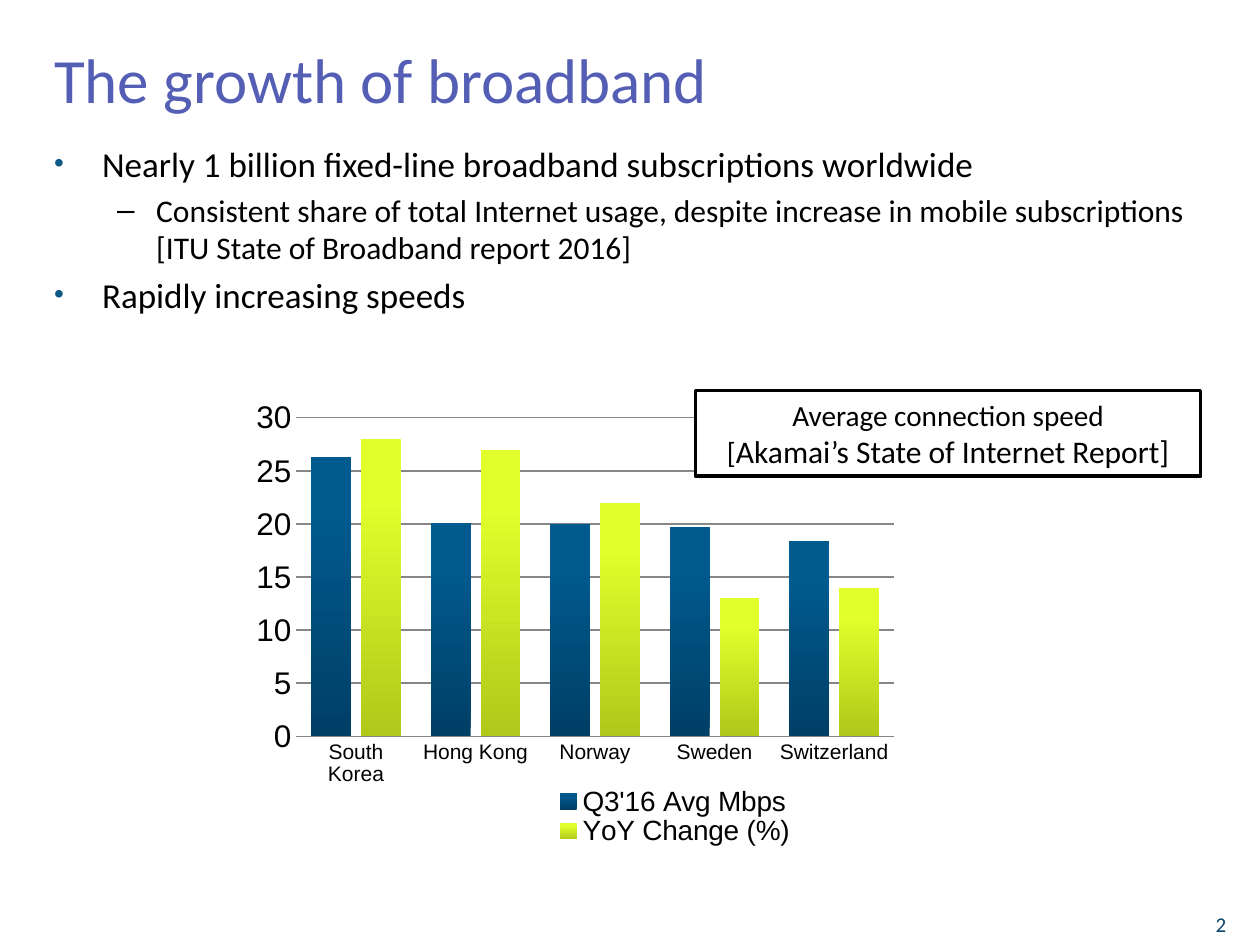
"""Build a slide on broadband growth with a bullet list and a speed chart."""
from lxml import etree
from pptx import Presentation, util as u
from pptx.chart import data as cd
from pptx.dml.color import RGBColor
from pptx.enum import chart as ch, shapes, text
from pptx.oxml import ns

THEME = {
    "font": "Calibri", "chart_font": "Arial",
    "title": "545EB4", "text": "000000", "bullet": "0C5986",
    "number": "094365", "paper": "FFFFFF", "grid": "878787",
    "title_size": 36, "sizes": (20, 18), "number_size": 12,
    "axis_size": 18, "category_size": 12, "legend_size": 16,
}
TITLE = "The growth of broadband"
BULLETS = [
    (0, "Nearly 1 billion fixed-line broadband subscriptions worldwide"),
    (1, "Consistent share of total Internet usage, despite increase in mobile "
        "subscriptions [ITU State of Broadband report 2016]"),
    (0, "Rapidly increasing speeds"),
]
LEVELS = [
    {"char": "•", "color": THEME["bullet"], "scale": 80, "left": 0.38, "hang": 0.38},
    {"char": "–", "color": THEME["text"], "scale": 100, "left": 0.81, "hang": 0.31},
]
CAPTION = [
    [("Average connection speed", 16.7)],
    [("[", 16.7), ("Akamai’s State of Internet Report]", 18)],
]
COUNTRIES = ["South Korea", "Hong Kong", "Norway", "Sweden", "Switzerland"]
SERIES = [
    ("Q3'16 Avg Mbps", (26.3, 20.1, 20, 19.7, 18.4), ("003F66", "005A8E")),
    ("YoY Change (%)", (28, 27, 22, 13, 14), ("B0C81A", "E0FF2B")),
]
NUMBER = "2"


def rgb(name):
    return RGBColor.from_string(name)


def box(*lengths):
    return [u.Inches(v) for v in lengths]


def place(sp, *lengths):
    sp.left, sp.top, sp.width, sp.height = box(*lengths)


def style(font, size, color=THEME["text"], name=THEME["font"]):
    font.size, font.name = u.Pt(size), name
    font.color.rgb = rgb(color)


def add_text(p, content, size, color=THEME["text"], align=text.PP_ALIGN.LEFT):
    p.alignment = align
    r = p.add_run()
    r.text = content
    style(r.font, size, color)


def paragraph(tf, i):
    return tf.add_paragraph() if i else tf.paragraphs[0]


def add_bullet(p, char, color, scale, left, hang):
    pr = p._p.get_or_add_pPr()
    pr.set("marL", str(u.Inches(left)))
    pr.set("indent", str(-u.Inches(hang)))
    clr = etree.SubElement(pr, ns.qn("a:buClr"))
    etree.SubElement(clr, ns.qn("a:srgbClr"), val=color)
    etree.SubElement(pr, ns.qn("a:buSzPct"), val=str(scale * 1000))
    etree.SubElement(pr, ns.qn("a:buFont"), typeface=THEME["chart_font"])
    etree.SubElement(pr, ns.qn("a:buChar"), char=char)


def set_layout(parent, index, inner, **parts):
    for old in parent.findall(ns.qn("c:layout")):
        parent.remove(old)
    layout = etree.Element(ns.qn("c:layout"))
    manual = etree.SubElement(layout, ns.qn("c:manualLayout"))
    values = {"layoutTarget": "inner"} if inner else {}
    values.update(xMode="edge", yMode="edge", **parts)
    for tag, value in values.items():
        etree.SubElement(manual, ns.qn("c:" + tag), val=str(value))
    parent.insert(index, layout)


def add_speed_chart(s):
    data = cd.CategoryChartData()
    data.categories = COUNTRIES
    for name, values, _ in SERIES:
        data.add_series(name, values)
    chart = s.shapes.add_chart(ch.XL_CHART_TYPE.COLUMN_CLUSTERED,
                               *box(1.93, 3.1, 5.27, 3.62), data).chart
    chart.has_title = False
    style(chart.font, THEME["axis_size"], name=THEME["chart_font"])
    plot = chart.plots[0]
    plot.gap_width, plot.overlap, plot.vary_by_categories = 75, -25, False
    for series, (_, _, colors) in zip(plot.series, SERIES):
        fill = series.format.fill
        fill.gradient()
        fill.gradient_angle = 90
        for stop, color, position in zip(fill.gradient_stops, colors, (0, 0.8)):
            stop.color.rgb, stop.position = rgb(color), position
    cat, val = chart.category_axis, chart.value_axis
    for axis in (cat, val):
        axis.major_tick_mark = axis.minor_tick_mark = ch.XL_TICK_MARK.NONE
    style(cat.tick_labels.font, THEME["category_size"], name=THEME["chart_font"])
    val.minimum_scale, val.maximum_scale, val.major_unit = 0, 30, 5
    val.format.line.fill.background()
    val.has_major_gridlines = True
    for line in (cat.format.line, val.major_gridlines.format.line):
        line.color.rgb, line.width = rgb(THEME["grid"]), u.Pt(0.75)
    chart.has_legend = True
    legend = chart.legend
    legend.position, legend.include_in_layout = ch.XL_LEGEND_POSITION.BOTTOM, False
    style(legend.font, THEME["legend_size"], name=THEME["chart_font"])
    area = chart._chartSpace.chart.plotArea
    set_layout(area, 0, True, x=0.08, y=0.06, w=0.9, h=0.7)
    set_layout(legend._element, 1, False, x=0.45, y=0.87, w=0.4, h=0.13)


def add_caption(s):
    sp = s.shapes.add_shape(shapes.MSO_SHAPE.RECTANGLE, *box(5.52, 3.1, 4.01, 0.68))
    sp.shadow.inherit = False
    sp.fill.solid()
    sp.fill.fore_color.rgb = rgb(THEME["paper"])
    sp.line.color.rgb, sp.line.width = rgb(THEME["text"]), u.Pt(2)
    tf = sp.text_frame
    tf.word_wrap = True
    for i, runs in enumerate(CAPTION):
        p = paragraph(tf, i)
        for content, size in runs:
            add_text(p, content, size, align=text.PP_ALIGN.CENTER)


def main():
    prs = Presentation()
    prs.slide_width, prs.slide_height = box(10, 7.5)
    s = prs.slides.add_slide(prs.slide_layouts[1])

    title, body = s.placeholders
    place(title, 0.33, 0.33, 9.33, 0.58)
    title.text_frame.vertical_anchor = text.MSO_ANCHOR.MIDDLE
    add_text(title.text_frame.paragraphs[0], TITLE, THEME["title_size"], THEME["title"])

    place(body, 0.33, 1.08, 9.33, 5.83)
    for tf in (title.text_frame, body.text_frame):
        tf.auto_size = text.MSO_AUTO_SIZE.NONE
    for i, (level, content) in enumerate(BULLETS):
        p = paragraph(body.text_frame, i)
        p.level = level
        add_bullet(p, **LEVELS[level])
        size = THEME["sizes"][level]
        p.space_before = u.Pt(size * 0.2 if i else 0)
        add_text(p, content, size)

    add_speed_chart(s)
    add_caption(s)

    tf = s.shapes.add_textbox(*box(9.55, 7.17, 0.45, 0.33)).text_frame
    tf.word_wrap, tf.vertical_anchor = True, text.MSO_ANCHOR.MIDDLE
    add_text(tf.paragraphs[0], NUMBER, THEME["number_size"], THEME["number"])
    prs.save("out.pptx")


if __name__ == "__main__":
    main()
